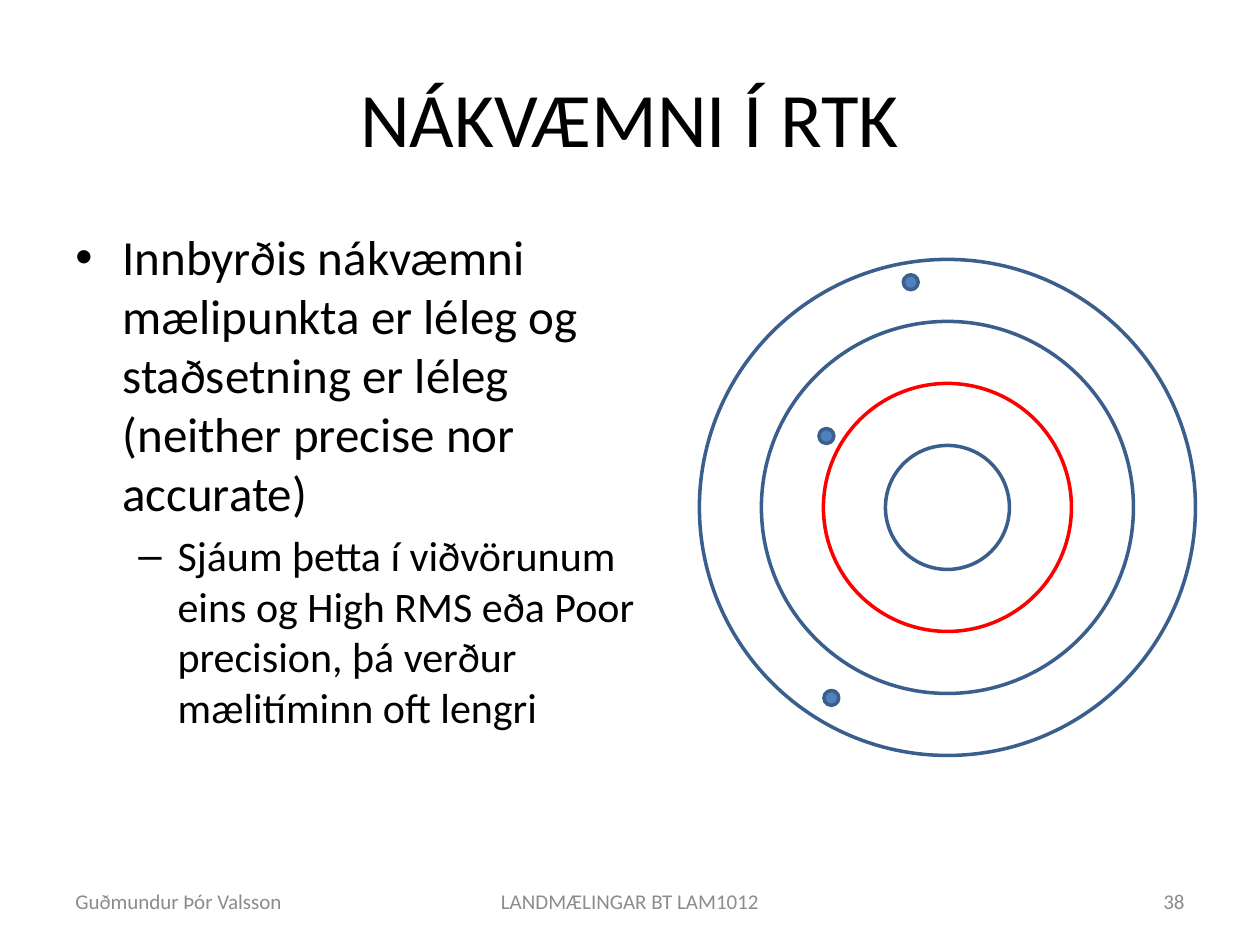
from lxml import etree
from pptx import Presentation
from pptx.dml.color import RGBColor
from pptx.enum.shapes import MSO_SHAPE
from pptx.enum.text import MSO_ANCHOR, PP_ALIGN
from pptx.oxml.ns import qn
from pptx.util import Cm, Pt

OVAL = MSO_SHAPE.OVAL
TOP, MIDDLE = MSO_ANCHOR.TOP, MSO_ANCHOR.MIDDLE
LEFT, CENTER, RIGHT = PP_ALIGN.LEFT, PP_ALIGN.CENTER, PP_ALIGN.RIGHT

FONT = "Calibri"
BLACK, GRAY, BLUE, NAVY, RED = "000000", "8C8C8C", "4F81BD", "3A5F8C", "FF0000"

TITLE = "NÁKVÆMNI Í RTK"
BULLETS = [
    ("Innbyrðis nákvæmni mælipunkta er léleg og staðsetning er léleg "
     "(neither precise nor accurate)",
     {"size": 28, "level": 0, "mark": "•", "margin": 0.95, "indent": -0.95, "before": 0}),
    ("Sjáum þetta í viðvörunum eins og High RMS eða Poor precision, "
     "þá verður mælitíminn oft lengri",
     {"size": 24, "level": 1, "mark": "–", "margin": 2.06, "indent": -0.79, "before": 5}),
]
FOOTERS = [
    ("Guðmundur Þór Valsson", 1.27, 5.93, LEFT),
    ("LANDMÆLINGAR BT LAM1012", 8.68, 8.04, CENTER),
    ("38", 18.2, 5.93, RIGHT),
]
TARGET_CENTER = (19.1, 10.23)
RING_STEP = 1.25
RING_COLORS = [NAVY, RED, NAVY, NAVY]
DOT_RADIUS = 0.15
DOT_CENTERS = [(16.66, 8.79), (18.36, 5.69), (16.76, 14.07)]


def color(value):
    return RGBColor.from_string(value)


def add_box(slide, left, top, width, height, anchor):
    box = slide.shapes.add_textbox(Cm(left), Cm(top), Cm(width), Cm(height))
    frame = box.text_frame
    frame.word_wrap = True
    frame.vertical_anchor = anchor
    return frame


def write(paragraph, text, size, text_color, alignment=LEFT):
    paragraph.alignment = alignment
    run = paragraph.add_run()
    run.text = text
    for name, value in {"name": FONT, "size": Pt(size)}.items():
        setattr(run.font, name, value)
    run.font.color.rgb = color(text_color)


def add_bullet(paragraph, style):
    paragraph.level = style["level"]
    paragraph.space_before = Pt(style["before"])
    properties = paragraph._p.get_or_add_pPr()
    properties.set("marL", str(Cm(style["margin"])))
    properties.set("indent", str(Cm(style["indent"])))
    etree.SubElement(properties, qn("a:buFont"), typeface="Arial")
    etree.SubElement(properties, qn("a:buChar"), char=style["mark"])


def add_circle(shapes, center, radius, line_color, fill_color=None):
    x, y = center
    shape = shapes.add_shape(OVAL, Cm(x - radius), Cm(y - radius), Cm(2 * radius), Cm(2 * radius))
    shape.shadow.inherit = False
    shape.line.color.rgb = color(line_color)
    shape.line.width = Pt(2)
    if fill_color:
        shape.fill.solid()
        shape.fill.fore_color.rgb = color(fill_color)
    else:
        shape.fill.background()


def main():
    presentation = Presentation()
    presentation.slide_width, presentation.slide_height = Cm(25.4), Cm(19.05)
    slide = presentation.slides.add_slide(presentation.slide_layouts[6])

    title = add_box(slide, 1.27, 0.76, 22.86, 3.18, MIDDLE)
    write(title.paragraphs[0], TITLE, 44, BLACK, CENTER)

    body = add_box(slide, 1.27, 4.45, 12.22, 12.57, TOP)
    for index, (text, style) in enumerate(BULLETS):
        paragraph = body.add_paragraph() if index else body.paragraphs[0]
        add_bullet(paragraph, style)
        write(paragraph, text, style["size"], BLACK)

    for text, left, width, alignment in FOOTERS:
        footer = add_box(slide, left, 17.65, width, 1.02, MIDDLE)
        write(footer.paragraphs[0], text, 12, GRAY, alignment)

    target = slide.shapes.add_group_shape()
    for number in range(len(RING_COLORS), 0, -1):
        add_circle(target.shapes, TARGET_CENTER, number * RING_STEP, RING_COLORS[number - 1])
    for center in DOT_CENTERS:
        add_circle(slide.shapes, center, DOT_RADIUS, NAVY, BLUE)

    presentation.save("out.pptx")


if __name__ == "__main__":
    main()
